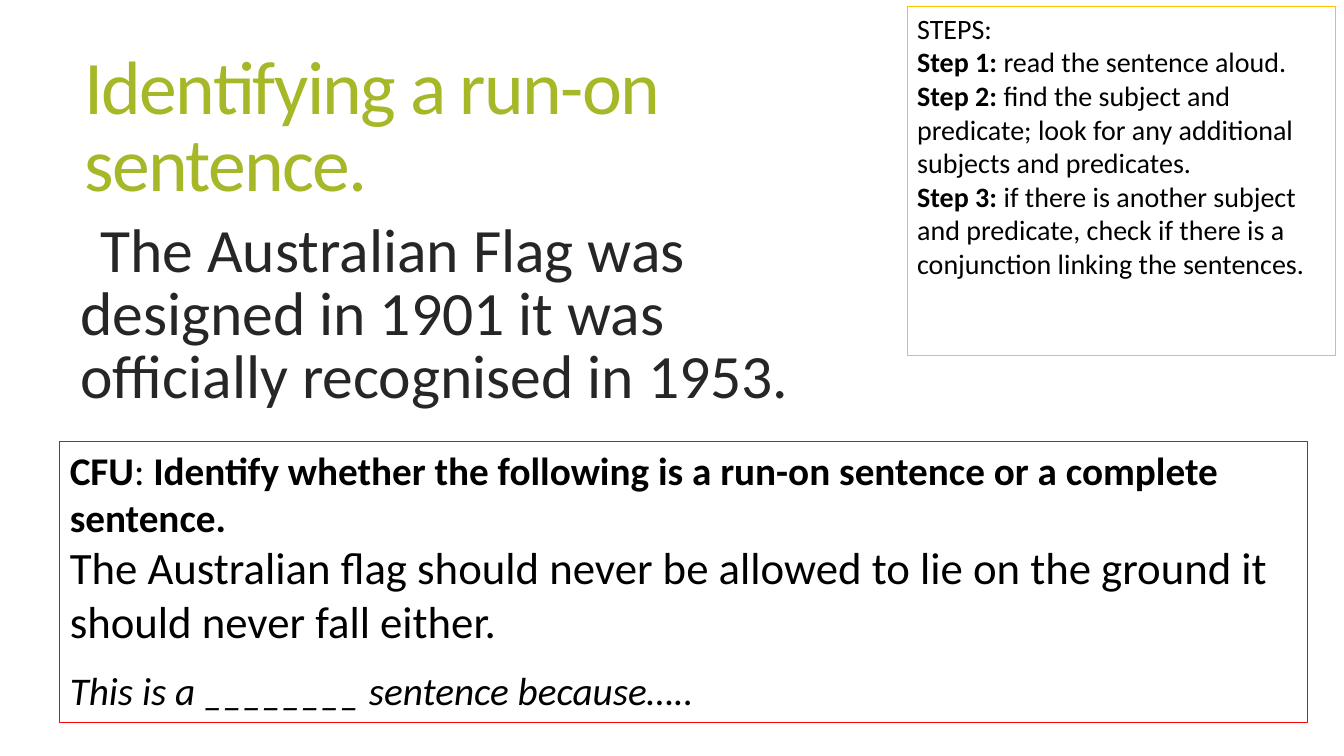
from dataclasses import dataclass

from lxml.etree import SubElement
from pptx import Presentation
from pptx.dml.color import RGBColor
from pptx.enum.shapes import MSO_SHAPE as Preset
from pptx.enum.text import MSO_ANCHOR as Anchor, MSO_AUTO_SIZE as AutoSize, PP_ALIGN as Align
from pptx.oxml.ns import qn
from pptx.shapes.autoshape import Shape
from pptx.slide import Slide
from pptx.util import Emu, Pt

EMU_PER_PX = 9525


@dataclass(frozen=True)
class Theme:
    font: str = "Calibri"
    title_color: str = "A6B727"
    example_color: str = "262626"
    text_color: str = "000000"
    steps_line: str = "FFC000"
    check_line: str = "FF0000"
    title_size: int = 54
    example_size: int = 44
    question_size: int = 32
    prompt_size: int = 28
    steps_size: int = 20
    title_tracking: int = -120
    tight_spacing: float = 0.85


@dataclass(frozen=True)
class Box:
    left: int
    top: int
    width: int
    height: int


@dataclass(frozen=True)
class RunSpec:
    text: str
    size: int
    color: str
    bold: bool = False
    italic: bool = False
    tracking: int = 0


@dataclass(frozen=True)
class ParagraphSpec:
    runs: tuple[RunSpec, ...]
    line_spacing: float = 1.0
    space_before: int = 0
    hanging: int = 0


@dataclass(frozen=True)
class Panel:
    box: Box
    line_color: str
    paragraphs: tuple[ParagraphSpec, ...]


THEME = Theme()


def px(value: int) -> Emu:
    return Emu(value * EMU_PER_PX)


def edges(box: Box) -> tuple[Emu, Emu, Emu, Emu]:
    return px(box.left), px(box.top), px(box.width), px(box.height)


def steps_run(text: str, bold: bool = False) -> RunSpec:
    return RunSpec(text, THEME.steps_size, THEME.text_color, bold)


def step(number: int, text: str) -> ParagraphSpec:
    return ParagraphSpec((steps_run(f"Step {number}: ", True), steps_run(text)))


def check_run(text: str, bold: bool = False, italic: bool = False) -> RunSpec:
    return RunSpec(text, THEME.prompt_size, THEME.text_color, bold, italic)


def write_text(shape: Shape, paragraphs: tuple[ParagraphSpec, ...], anchor: Anchor = Anchor.TOP) -> None:
    frame = shape.text_frame
    frame.word_wrap = True
    frame.auto_size = AutoSize.NONE
    frame.vertical_anchor = anchor
    for index, spec in enumerate(paragraphs):
        paragraph = frame.add_paragraph() if index else frame.paragraphs[0]
        paragraph.alignment = Align.LEFT
        paragraph.line_spacing = spec.line_spacing
        paragraph.space_before = Pt(spec.space_before)
        if spec.hanging:
            properties = paragraph._p.get_or_add_pPr()
            properties.set("marL", str(px(spec.hanging)))
            properties.set("indent", str(-px(spec.hanging)))
            SubElement(properties, qn("a:buChar")).set("char", " ")
        for run_spec in spec.runs:
            run = paragraph.add_run()
            run.text = run_spec.text
            run.font.name = THEME.font
            run.font.size = Pt(run_spec.size)
            run.font.bold = run_spec.bold
            run.font.italic = run_spec.italic
            run.font.color.rgb = RGBColor.from_string(run_spec.color)
            if run_spec.tracking:
                run._r.get_or_add_rPr().set("spc", str(run_spec.tracking))


def add_title(slide: Slide, box: Box, text: str) -> None:
    title = slide.shapes.title
    title.left, title.top, title.width, title.height = edges(box)
    run = RunSpec(text, THEME.title_size, THEME.title_color, tracking=THEME.title_tracking)
    write_text(title, (ParagraphSpec((run,), THEME.tight_spacing),), Anchor.MIDDLE)


def add_example(slide: Slide, box: Box, text: str) -> None:
    example = slide.shapes.add_textbox(*edges(box))
    run = RunSpec(text, THEME.example_size, THEME.example_color)
    write_text(example, (ParagraphSpec((run,), THEME.tight_spacing, 13, 10),))


def add_panel(slide: Slide, panel: Panel) -> None:
    shape = slide.shapes.add_shape(Preset.RECTANGLE, *edges(panel.box))
    shape.shadow.inherit = False
    shape.fill.background()
    shape.line.color.rgb = RGBColor.from_string(panel.line_color)
    shape.line.width = Pt(0.75)
    write_text(shape, panel.paragraphs)


PANELS = (
    Panel(Box(864, 6, 408, 333), THEME.steps_line, (
        ParagraphSpec((steps_run("STEPS:"),)),
        step(1, "read the sentence aloud."),
        step(2, "find the subject and predicate; look for any additional subjects and predicates."),
        step(3, "if there is another subject and predicate, check if there is "
                "a conjunction linking the sentences."),
    )),
    Panel(Box(57, 420, 1188, 268), THEME.check_line, (
        ParagraphSpec((
            check_run("CFU", bold=True),
            check_run(": "),
            check_run("Identify whether the following is a run-on sentence or a complete sentence.", bold=True),
        )),
        ParagraphSpec((RunSpec(
            "The Australian flag should never be allowed to lie on the ground it should never fall either.",
            THEME.question_size, THEME.text_color),)),
        ParagraphSpec((check_run("This is a ________ sentence because…..", italic=True),), space_before=13),
    )),
)


def main() -> None:
    presentation = Presentation()
    presentation.slide_width = px(1280)
    presentation.slide_height = px(720)
    slide = presentation.slides.add_slide(presentation.slide_layouts.get_by_name("Title Only"))
    add_title(slide, Box(71, 37, 767, 174), "Identifying a run-on sentence.")
    add_example(slide, Box(57, 207, 776, 396),
                "The Australian Flag was designed in 1901 it was officially recognised in 1953.")
    for panel in PANELS:
        add_panel(slide, panel)
    presentation.save("out.pptx")


if __name__ == "__main__":
    main()
